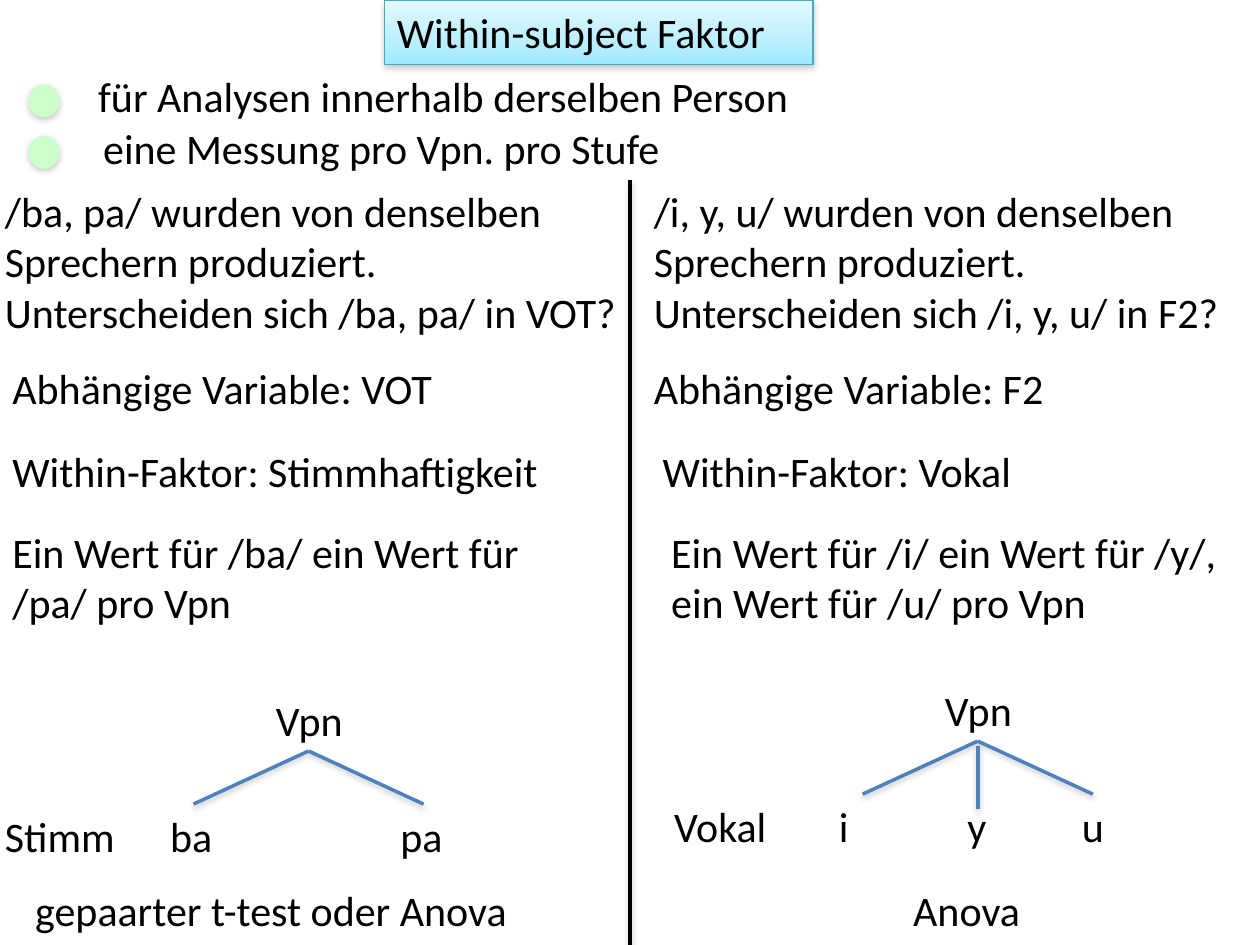
"""Build a slide comparing two within-subject factor designs."""
from copy import deepcopy

from lxml import etree
from pptx import Presentation, util as u
from pptx.dml.color import RGBColor
from pptx.enum import shapes, text
from pptx.oxml.ns import nsdecls, qn

TITLE = ("Within-subject Faktor", 7.75, 0, 8.64, 1.3)
TITLE_STOPS = [(0, "E4F9FF"), (0.65, "BBEFFF"), (1, "9EEAFF")]
POINTS = [
    ("für Analysen innerhalb derselben Person", 1.73, 1.3, 15.21),
    ("eine Messung pro Vpn. pro Stufe", 1.83, 2.34, 12.27),
]
ROWS = [(3.61, 3.33), (7.19, 1.3), (8.86, 1.3), (10.49, 2.31), (17.7, 1.27)]
COLUMNS = [
    [
        ("/ba, pa/ wurden von denselben Sprechern produziert. "
         "Unterscheiden sich /ba, pa/ in VOT?", -0.15, 13.06),
        ("Abhängige Variable: VOT", 0, 10.77),
        ("Within-Faktor: Stimmhaftigkeit", 0, 11.61),
        ("Ein Wert für /ba/ ein Wert für /pa/ pro Vpn", 0, 10.77),
        ("gepaarter t-test oder Anova", 0.46, 10.77),
    ],
    [
        ("/i, y, u/ wurden von denselben Sprechern produziert. "
         "Unterscheiden sich /i, y, u/ in F2?", 12.93, 12.65),
        ("Abhängige Variable: F2", 12.93, 10.77),
        ("Within-Faktor: Vokal", 13.11, 8.53),
        ("Ein Wert für /i/ ein Wert für /y/, ein Wert für /u/ pro Vpn", 13.28, 11.89),
        ("Anova", 18.16, 3.99),
    ],
]
TREES = [
    {"apex": (6.22, 15.14), "middle": False,
     "labels": [("Stimm", -0.15, 2.74), ("ba", 3.18, 1.37), ("pa", 7.82, 1.37)]},
    {"apex": (19.71, 14.94), "middle": True,
     "labels": [("Vokal", 13.34, 2.44), ("i", 16.66, 0.71),
                ("y", 19.25, 0.91), ("u", 21.56, 0.97)]},
]
FONT = {"name": "Calibri", "size": u.Pt(24)}
SPREAD, DROP = 2.32, 1.07
SHADOW = (
    f'<a:effectLst {nsdecls("a")}><a:outerShdw blurRad="40000" dist="20000" dir="5400000" '
    'rotWithShape="0"><a:srgbClr val="808080"><a:alpha val="38000"/></a:srgbClr>'
    '</a:outerShdw></a:effectLst>'
)

presentation = Presentation()
presentation.slide_width, presentation.slide_height = u.Cm(25.4), u.Cm(19.05)
slide = presentation.slides.add_slide(presentation.slide_layouts[6])


def color(value):
    return RGBColor.from_string(value)


def outline(shape, line_color, width):
    shape.line.color.rgb = color(line_color)
    shape.line.width = u.Pt(width)
    shape._element.spPr.append(etree.fromstring(SHADOW))


def write(shape, content, wrap=True):
    frame = shape.text_frame
    settings = {"word_wrap": wrap, "auto_size": text.MSO_AUTO_SIZE.SHAPE_TO_FIT_TEXT,
                "vertical_anchor": text.MSO_ANCHOR.TOP}
    for name, value in settings.items():
        setattr(frame, name, value)
    paragraph = frame.paragraphs[0]
    paragraph.alignment = text.PP_ALIGN.LEFT
    run = paragraph.add_run()
    run.text = content
    for name, value in FONT.items():
        setattr(run.font, name, value)
    run.font.color.rgb = color("000000")


def add_text(content, left, top, width, height=1.27, wrap=True):
    write(slide.shapes.add_textbox(*map(u.Cm, (left, top, width, height))), content, wrap)


def add_line(start, end, line_color):
    connector = slide.shapes.add_connector(
        shapes.MSO_CONNECTOR.STRAIGHT, *map(u.Cm, (*start, *end)))
    outline(connector, line_color, 2)


def add_title(content, *box):
    shape = slide.shapes.add_shape(shapes.MSO_SHAPE.RECTANGLE, *map(u.Cm, box))
    shape.fill.gradient()
    shape.fill.gradient_angle = 270
    stop_list = shape._element.spPr.find(".//" + qn("a:gsLst"))
    stop_list.insert(1, deepcopy(stop_list[0]))
    for stop, (position, value) in zip(shape.fill.gradient_stops, TITLE_STOPS):
        stop.position = position
        stop.color.rgb = color(value)
    outline(shape, "46AAC5", 0.75)
    write(shape, content)


def add_point(content, left, top, width):
    add_text(content, left, top, width)
    dot = slide.shapes.add_shape(
        shapes.MSO_SHAPE.OVAL, *map(u.Cm, (0.58, top + 0.41, 0.61, 0.64)))
    dot.fill.solid()
    dot.fill.fore_color.rgb = color("CCFFCC")
    outline(dot, "CCFFCC", 0.75)


def add_tree(apex, middle, labels):
    x, y = apex
    add_text("Vpn", x - 0.91, y - 1.27, 1.9, wrap=False)
    for side in (-1, 1):
        add_line(apex, (x + side * SPREAD, y + DROP), "4F81BD")
    if middle:
        add_line((x, y + 0.1), (x, y + 1.37), "4F81BD")
    for content, left, width in labels:
        add_text(content, left, y + DROP, width, wrap=False)


add_title(*TITLE)
for point in POINTS:
    add_point(*point)
for column in COLUMNS:
    for (content, left, width), (top, height) in zip(column, ROWS):
        add_text(content, left, top, width, height)
for tree in TREES:
    add_tree(**tree)
add_line((12.7, 3.63), (12.7, 19.05), "000000")
presentation.save("out.pptx")
